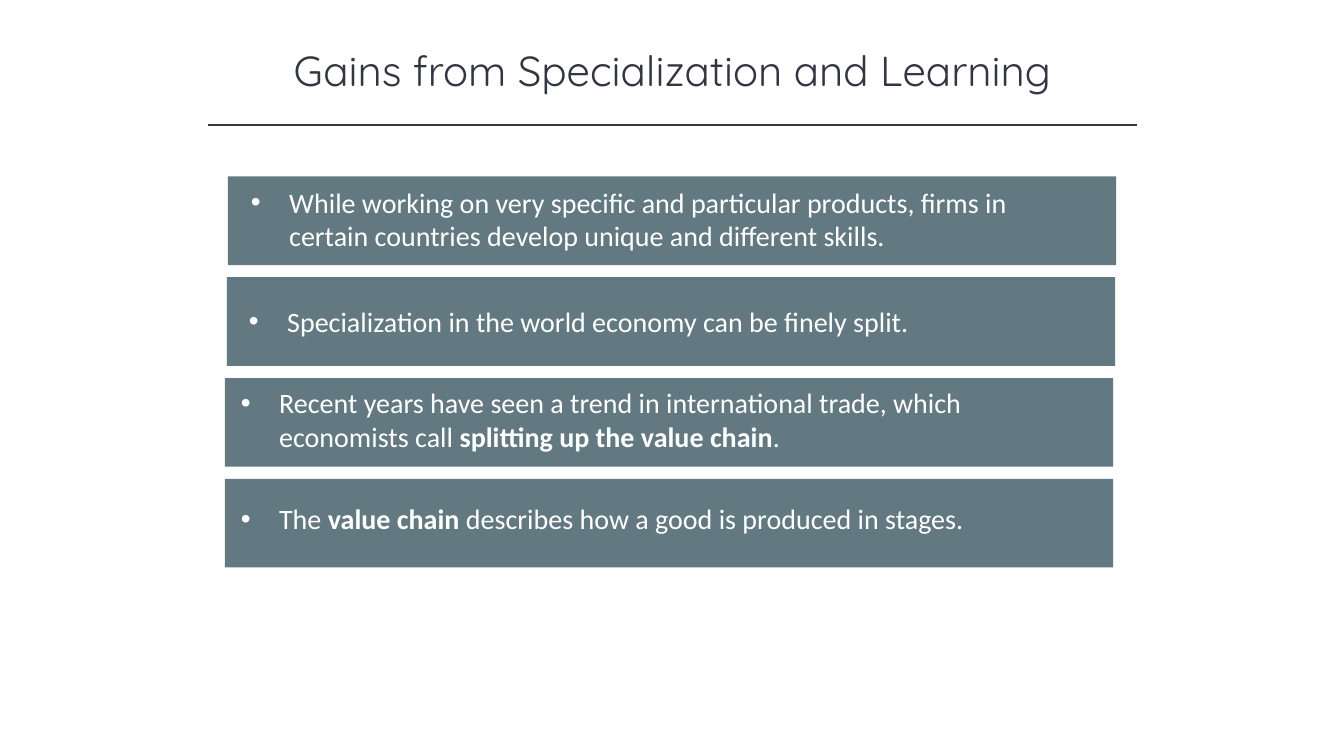
"""Build the slide on gains from specialization and learning."""
from lxml.etree import SubElement as Sub
from pptx import Presentation
from pptx.dml.color import RGBColor
from pptx.enum.shapes import MSO_CONNECTOR as Link, MSO_SHAPE as Shape
from pptx.enum.text import MSO_ANCHOR as Anchor, PP_ALIGN as Align
from pptx.oxml.ns import qn
from pptx.util import Inches, Pt

TITLE = "Gains from Specialization and Learning"
# Each bar: left edge, label left, label top inside the bar, label height, (text, bold) runs.
BARS = [
    (2.26, 2.39, 0.04, 0.77, [("While working on very specific and particular products, "
                               "firms in certain countries develop unique and different skills.", False)]),
    (2.25, 2.37, 0.22, 0.44, [("Specialization in the world economy can be finely split.", False)]),
    (2.23, 2.29, 0.03, 0.77, [("Recent years have seen a trend in international trade, "
                               "which economists call ", False),
                              ("splitting up the value chain", True), (".", False)]),
    (2.23, 2.29, 0.18, 0.44, [("The ", False), ("value chain ", True),
                              ("describes how a good is produced in stages.", False)]),
]

INK = RGBColor(0x32, 0x35, 0x42)
SLATE = RGBColor(0x62, 0x79, 0x81)
WHITE = RGBColor(0xFF, 0xFF, 0xFF)
WIDE, HIGH = 13.33, 7.5
TOP, PITCH = 1.75, 1.0
BAR_W, BAR_H, LABEL_W = 8.81, 0.88, 8.54
INDENT = Inches(0.38)


def style(font, name, size, color, bold=False):
    font.name, font.size, font.bold = name, Pt(size), bold
    font.color.rgb = color


def add_title(slide):
    title = slide.shapes.title
    title.left, title.top, title.width, title.height = map(Inches, (1.67, 0.39, 10, 0.61))
    frame = title.text_frame
    frame.text = TITLE
    frame.vertical_anchor = Anchor.MIDDLE
    para = frame.paragraphs[0]
    para.alignment = Align.CENTER
    style(para.runs[0].font, "Quicksand", 30, INK)


def add_rule(slide):
    rule = slide.shapes.add_connector(Link.STRAIGHT, *map(Inches, (2.06, 1.24, 11.28, 1.24)))
    rule.line.color.rgb = INK
    rule.line.width = Pt(1)
    Sub(rule._element.spPr, qn("a:effectLst"))


def add_rect(group, *box):
    rect = group.shapes.add_shape(Shape.RECTANGLE, *map(Inches, box))
    rect.shadow.inherit = False
    rect.fill.solid()
    rect.fill.fore_color.rgb = SLATE
    rect.line.fill.background()
    return rect


def add_bar(slide, top, left, text_left, drop, height, runs):
    group = slide.shapes.add_group_shape()
    add_rect(group, left, top, BAR_W, BAR_H)
    frame = add_rect(group, text_left, top + drop, LABEL_W, height).text_frame
    frame.word_wrap = True
    frame.vertical_anchor = Anchor.TOP
    para = frame.paragraphs[0]
    para.alignment = Align.LEFT
    props = para._p.get_or_add_pPr()
    props.set("marL", str(INDENT))
    props.set("indent", str(-INDENT))
    Sub(props, qn("a:buFont"), typeface="Arial")
    Sub(props, qn("a:buChar"), char="•")
    for text, bold in runs:
        run = para.add_run()
        run.text = text
        style(run.font, "Calibri", 20, WHITE, bold)


def main():
    deck = Presentation()
    deck.slide_width, deck.slide_height = Inches(WIDE), Inches(HIGH)
    slide = deck.slides.add_slide(deck.slide_layouts[5])
    add_title(slide)
    add_rule(slide)
    for row, bar in enumerate(BARS):
        add_bar(slide, TOP + row * PITCH, *bar)
    deck.save("out.pptx")


if __name__ == "__main__":
    main()
